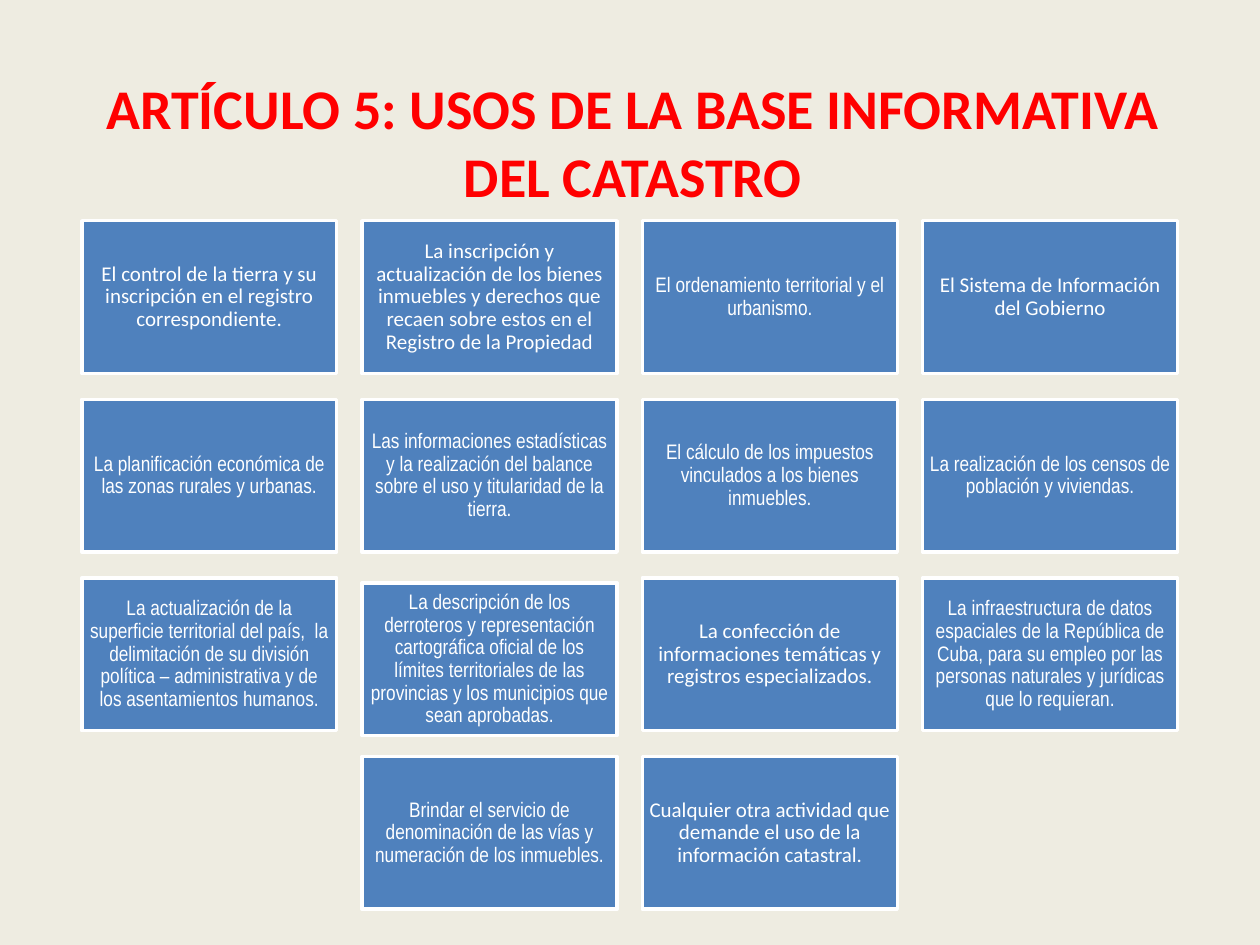
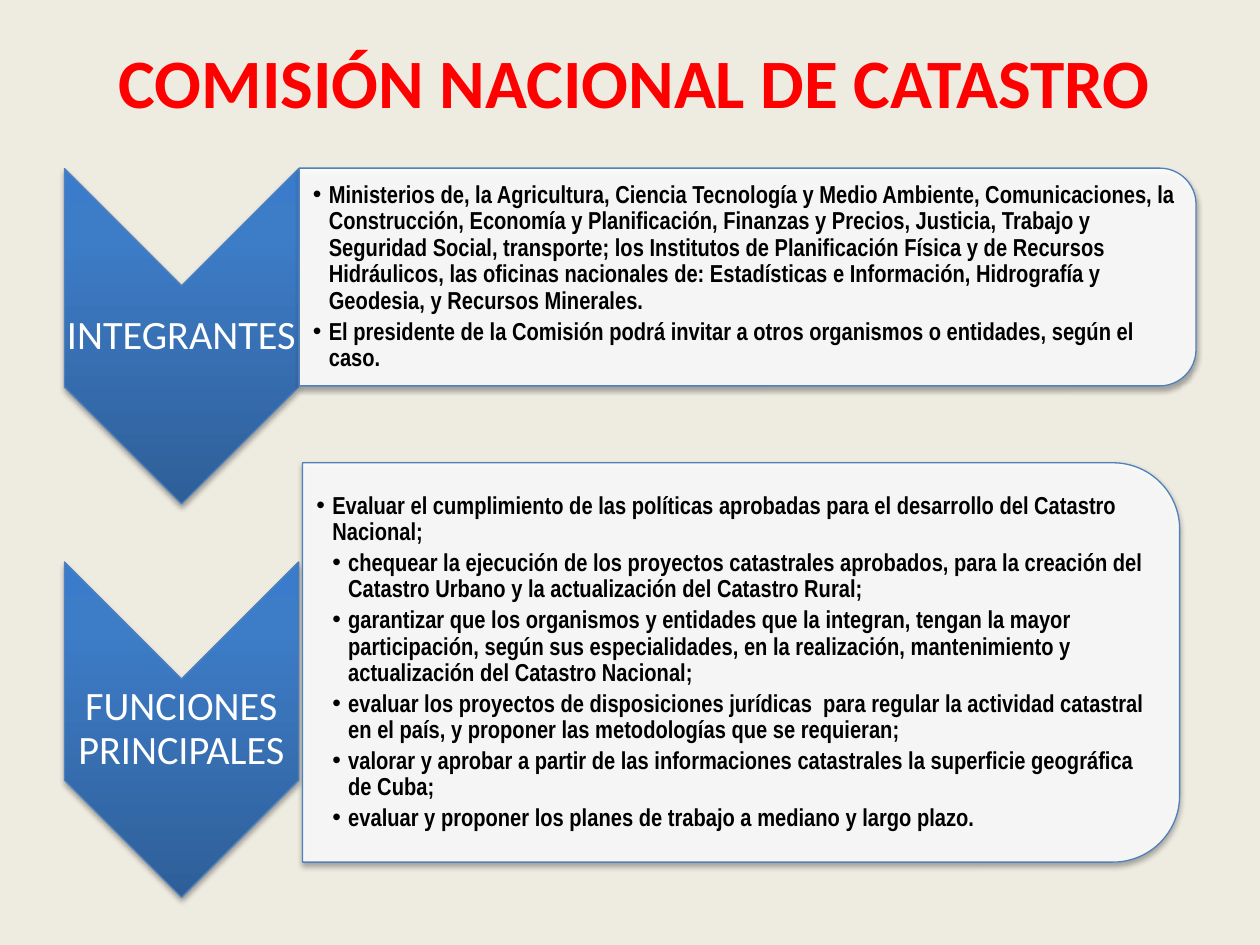
"""Builds two slides on the uses of the land register and its commission."""
import pptx
import pptx.dml.color
import pptx.enum.shapes
import pptx.enum.text
import pptx.oxml
import pptx.oxml.ns
import pptx.util

Cm, Pt = pptx.util.Cm, pptx.util.Pt
RGB = pptx.dml.color.RGBColor
qn, nsdecls = pptx.oxml.ns.qn, pptx.oxml.ns.nsdecls
Shape = pptx.enum.shapes.MSO_SHAPE
Align = pptx.enum.text.PP_ALIGN
Anchor = pptx.enum.text.MSO_ANCHOR
Fit = pptx.enum.text.MSO_AUTO_SIZE

SAND = RGB(0xEE, 0xEC, 0xE1)
RED = RGB(0xFF, 0x00, 0x00)
BLUE = RGB(0x4F, 0x81, 0xBD)
WHITE = RGB(0xFF, 0xFF, 0xFF)
BLACK = RGB(0x00, 0x00, 0x00)
DEEP = RGB(0x2F, 0x5F, 0x99)
MID = RGB(0x3D, 0x7C, 0xC7)
LIGHT = RGB(0x3A, 0x7C, 0xCB)

SANS, NARROW = "Calibri", "Arial Narrow"
TITLE = {"name": SANS, "bold": True}
CARD = {"size": Pt(12)}
LABEL = {"name": SANS, "size": Pt(23)}
BODY = {"name": NARROW, "size": Pt(14), "bold": True}
CENTRE = {"alignment": Align.CENTER, "line_spacing": 0.9}
ITEM = {"alignment": Align.LEFT, "line_spacing": 0.9, "space_after": Pt(2.4)}

USES = [
    (SANS, "El control de la tierra y su inscripción en el registro correspondiente."),
    (SANS, "La inscripción y actualización de los bienes inmuebles y derechos que "
           "recaen sobre estos en el Registro de la Propiedad"),
    (NARROW, "El ordenamiento territorial y el urbanismo."),
    (SANS, "El Sistema de Información del Gobierno"),
    (NARROW, "La planificación económica de las zonas rurales y urbanas."),
    (NARROW, "Las informaciones estadísticas y la realización del balance sobre el "
             "uso y titularidad de la tierra."),
    (NARROW, "El cálculo de los impuestos vinculados a los bienes inmuebles."),
    (NARROW, "La realización de los censos de población y viviendas."),
    (NARROW, "La actualización de la superficie territorial del país,  la delimitación "
             "de su división política – administrativa y de los asentamientos humanos."),
    (NARROW, "La descripción de los derroteros y representación cartográfica oficial de "
             "los límites territoriales de las provincias y los municipios que sean "
             "aprobadas."),
    (SANS, "La confección de informaciones temáticas y registros especializados."),
    (NARROW, "La infraestructura de datos espaciales de la República de Cuba, para su "
             "empleo por las personas naturales y jurídicas que lo requieran."),
    (NARROW, "Brindar el servicio de denominación de las vías y numeración de los "
             "inmuebles."),
    (SANS, "Cualquier otra actividad que demande el uso de la información catastral."),
]
COLS = 4
LOW_USE = 9

MEMBERS = [
    (1, "Ministerios de, la Agricultura, Ciencia Tecnología y Medio Ambiente, "
        "Comunicaciones, la Construcción, Economía y Planificación, Finanzas y Precios, "
        "Justicia, Trabajo y Seguridad Social, transporte; los Institutos de "
        "Planificación Física y de Recursos Hidráulicos, las oficinas nacionales de: "
        "Estadísticas e Información, Hidrografía y Geodesia, y Recursos Minerales."),
    (1, "El presidente de la Comisión podrá invitar a otros organismos o entidades, "
        "según el caso."),
]
TASKS = [
    (1, "Evaluar el cumplimiento de las políticas aprobadas para el desarrollo del "
        "Catastro Nacional;"),
    (2, "chequear la ejecución de los proyectos catastrales aprobados, para la creación "
        "del Catastro Urbano y la actualización del Catastro Rural;"),
    (2, "garantizar que los organismos y entidades que la integran, tengan la mayor "
        "participación, según sus especialidades, en la realización, mantenimiento y "
        "actualización del Catastro Nacional;"),
    (2, "evaluar los proyectos de disposiciones jurídicas  para regular la actividad "
        "catastral en el país, y proponer las metodologías que se requieran;"),
    (2, "valorar y aprobar a partir de las informaciones catastrales la superficie "
        "geográfica de Cuba;"),
    (2, "evaluar y proponer los planes de trabajo a mediano y largo plazo."),
]


def assign(target, values):
    """Set each attribute named in a dict."""
    for name, value in values.items():
        setattr(target, name, value)


def place(x, y, w, h):
    """Turn centimetres into lengths."""
    return [Cm(n) for n in (x, y, w, h)]


def node(tag, inner="", **attrs):
    """Make a drawing element from a tag, its content and attributes."""
    pairs = "".join(f' {key}="{val}"' for key, val in attrs.items())
    return pptx.oxml.parse_xml(f"<a:{tag} {nsdecls('a')}{pairs}>{inner}</a:{tag}>")


def frame(shape, pads):
    """Set up a wrapped, middle-anchored text frame."""
    text = shape.text_frame
    left, rest = pads
    assign(text, {"word_wrap": True, "auto_size": Fit.NONE,
                  "vertical_anchor": Anchor.MIDDLE, "margin_left": Cm(left),
                  "margin_right": Cm(rest), "margin_top": Cm(rest),
                  "margin_bottom": Cm(rest)})
    return text


def write(para, words, font, colour, layout):
    """Fill one paragraph with a styled run."""
    assign(para, layout)
    run = para.add_run()
    run.text = words
    assign(run.font, font)
    run.font.color.rgb = colour


def start(deck, words, size, box):
    """Add a slide with its title."""
    slide = deck.slides.add_slide(deck.slide_layouts[5])
    title = slide.shapes.title
    assign(title, dict(zip(("left", "top", "width", "height"), place(*box))))
    text = frame(title, (0.25, 0.13))
    write(text.paragraphs[0], words, TITLE | {"size": Pt(size)}, RED,
          {"alignment": Align.CENTER})
    return slide


def block(slide, kind, box, fill, line, width):
    """Add a flat shape with a fill and an outline."""
    shape = slide.shapes.add_shape(kind, *place(*box))
    shape.shadow.inherit = False
    shape.fill.solid()
    shape.fill.fore_color.rgb = fill
    shape.line.color.rgb = line
    shape.line.width = Pt(width)
    return shape


def turn(slide, kind, box, fill):
    """Add a shadowed shape turned a quarter, given the box it covers."""
    x, y, w, h = box
    shift = (w - h) / 2
    shape = block(slide, kind, (x + shift, y - shift, h, w), fill, BLUE, 0.75)
    shape.rotation = 90
    shade = node("outerShdw", '<a:srgbClr val="000000"><a:alpha val="35000"/></a:srgbClr>',
                 blurRad=Pt(3.1), dist=Pt(1.8), dir=5400000, rotWithShape=0)
    shape._element.spPr.find(qn("a:effectLst")).append(shade)
    return shape


def card(slide, box, words, font):
    """Add a blue card with centred text."""
    shape = block(slide, Shape.RECTANGLE, box, BLUE, WHITE, 2)
    text = frame(shape, (0.13, 0.13))
    write(text.paragraphs[0], words, CARD | {"name": font}, WHITE, CENTRE)


def arrow(slide, box, words):
    """Add a shaded down chevron and its label."""
    x, y, w, h = box
    props = turn(slide, Shape.CHEVRON, box, MID)._element.spPr
    stops = "".join(f'<a:gs pos="{spot * 1000}"><a:srgbClr val="{tone}"/></a:gs>'
                    for spot, tone in ((0, DEEP), (80, MID), (100, LIGHT)))
    blend = node("gradFill", f'<a:gsLst>{stops}</a:gsLst>'
                 '<a:lin ang="16200000" scaled="0"/>', rotWithShape=0)
    props.replace(props.find(qn("a:solidFill")), blend)
    label = slide.shapes.add_textbox(*place(x, y + w / 2, w, h - w))
    text = frame(label, (0.04, 0.04))
    write(text.paragraphs[0], words, LABEL, WHITE, CENTRE)


def panel(slide, box, items):
    """Add a pale panel rounded on the right, with a bullet list."""
    x, y, w, h = box
    shape = turn(slide, Shape.ROUND_2_SAME_RECTANGLE, box, WHITE)
    tone = shape._element.spPr.find(qn("a:solidFill"))[0]
    tone.append(node("alpha", val=90000))
    inset = h * 0.05
    field = slide.shapes.add_textbox(*place(x, y + inset, w - inset, h - 2 * inset))
    text = frame(field, (0.28, 0.03))
    for count, (level, words) in enumerate(items):
        para = text.add_paragraph() if count else text.paragraphs[0]
        write(para, words, BODY, BLACK, ITEM | {"level": level})
        props = para._p.get_or_add_pPr()
        step = Cm(0.32)
        props.set("marL", str(level * step))
        props.set("indent", str(-step))
        props.append(node("buFont", typeface="Arial"))
        props.append(node("buChar", char="•"))


def uses(deck):
    """Build the grid of uses."""
    slide = start(deck, "ARTÍCULO 5: USOS DE LA BASE INFORMATIVA DEL CATASTRO", 32,
                  (1.27, 0.76, 22.86, 4.17))
    for count, (font, words) in enumerate(USES):
        row, col = divmod(count, COLS)
        spare = COLS - min(COLS, len(USES) - row * COLS)
        drop = 0.1 if count == LOW_USE else 0
        box = (1.65 + (col + spare / 2) * 5.65, 4.45 + row * 3.6 + drop, 5.14, 3.08)
        card(slide, box, words, font)


def board(deck):
    """Build the slide on the commission."""
    slide = start(deck, "COMISIÓN NACIONAL DE CATASTRO", 39.6,
                  (1.3, 0.03, 22.86, 3.18))
    parts = [("INTEGRANTES", 3.4, (6.03, 3.39, 18.08, 4.39), MEMBERS),
             ("FUNCIONES PRINCIPALES", 11.33, (6.1, 9.33, 17.68, 8.05), TASKS)]
    for words, top, box, items in parts:
        arrow(slide, (1.3, top, 4.72, 6.76), words)
        panel(slide, box, items)


def main():
    """Build and save the deck."""
    deck = pptx.Presentation()
    assign(deck, {"slide_width": Cm(25.4), "slide_height": Cm(19.05)})
    back = deck.slide_master.background.fill
    back.solid()
    back.fore_color.rgb = SAND
    uses(deck)
    board(deck)
    deck.save("out.pptx")


if __name__ == "__main__":
    main()
